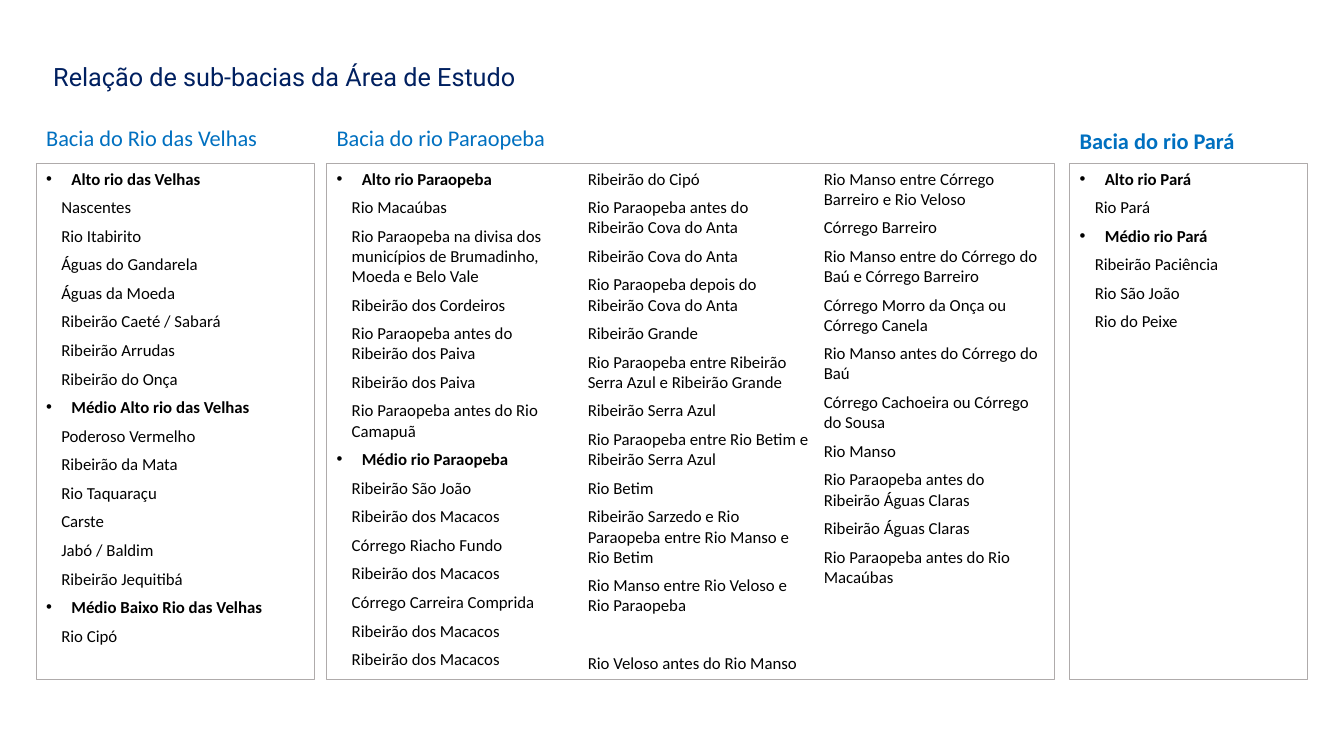
from lxml.etree import SubElement
from pptx import Presentation
from pptx.dml.color import RGBColor
from pptx.enum.shapes import MSO_SHAPE
from pptx.enum.text import MSO_ANCHOR, PP_ALIGN
from pptx.oxml.ns import qn
from pptx.util import Inches, Pt

COLORS = {"title": "002060", "basin": "0070C0", "text": "000000",
          "panel": "FFFFFF", "border": "AFABAB"}
HEADING_TOP, HEADING_HEIGHT = 1.21, 0.4
PANEL_TOP, PANEL_HEIGHT = 1.62, 5.12
SPACING = 3
WIDE_GAP = 23.5
WIDE_GAP_BEFORE = "Rio Veloso antes do Rio Manso"

VELHAS = {
    "Alto rio das Velhas": [
        "Nascentes", "Rio Itabirito", "Águas do Gandarela", "Águas da Moeda",
        "Ribeirão Caeté / Sabará", "Ribeirão Arrudas", "Ribeirão do Onça"],
    "Médio Alto rio das Velhas": [
        "Poderoso Vermelho", "Ribeirão da Mata", "Rio Taquaraçu", "Carste",
        "Jabó / Baldim", "Ribeirão Jequitibá"],
    "Médio Baixo Rio das Velhas": ["Rio Cipó"],
}
PARAOPEBA = {
    "Alto rio Paraopeba": [
        "Rio Macaúbas",
        "Rio Paraopeba na divisa dos municípios de Brumadinho, Moeda e Belo Vale",
        "Ribeirão dos Cordeiros",
        "Rio Paraopeba antes do Ribeirão dos Paiva",
        "Ribeirão dos Paiva",
        "Rio Paraopeba antes do Rio Camapuã"],
    "Médio rio Paraopeba": [
        "Ribeirão São João",
        "Ribeirão dos Macacos",
        "Córrego Riacho Fundo",
        "Ribeirão dos Macacos",
        "Córrego Carreira Comprida",
        "Ribeirão dos Macacos",
        "Ribeirão dos Macacos",
        "Ribeirão do Cipó",
        "Rio Paraopeba antes do Ribeirão Cova do Anta",
        "Ribeirão Cova do Anta",
        "Rio Paraopeba depois do Ribeirão Cova do Anta",
        "Ribeirão Grande",
        "Rio Paraopeba entre Ribeirão Serra Azul e Ribeirão Grande",
        "Ribeirão Serra Azul",
        "Rio Paraopeba entre Rio Betim e Ribeirão Serra Azul",
        "Rio Betim",
        "Ribeirão Sarzedo e Rio Paraopeba entre Rio Manso e Rio Betim",
        "Rio Manso entre Rio Veloso e Rio Paraopeba",
        "Rio Veloso antes do Rio Manso",
        "Rio Manso entre Córrego Barreiro e Rio Veloso",
        "Córrego Barreiro",
        "Rio Manso entre do Córrego do Baú e Córrego Barreiro",
        "Córrego Morro da Onça ou Córrego Canela",
        "Rio Manso antes do Córrego do Baú",
        "Córrego Cachoeira ou Córrego do Sousa",
        "Rio Manso",
        "Rio Paraopeba antes do Ribeirão Águas Claras",
        "Ribeirão Águas Claras",
        "Rio Paraopeba antes do Rio Macaúbas"],
}
PARA = {
    "Alto rio Pará": ["Rio Pará"],
    "Médio rio Pará": ["Ribeirão Paciência", "Rio São João", "Rio do Peixe"],
}


def color(name):
    return RGBColor.from_string(COLORS[name])


def set_font(paragraph, size, color_name, bold=False, face="Calibri"):
    font = paragraph.font
    font.name, font.size, font.bold = face, Pt(size), bold
    font.color.rgb = color(color_name)


def add_heading(slide, box, text, size, color_name, bold=False, face="Calibri"):
    heading = slide.shapes.add_textbox(*map(Inches, box)).text_frame
    heading.word_wrap = True
    heading.vertical_anchor = MSO_ANCHOR.MIDDLE if bold else MSO_ANCHOR.TOP
    line = heading.paragraphs[0]
    line.text = text
    set_font(line, size, color_name, bold, face)
    return line


def add_entry(frame, text, is_group):
    """Add a bulleted bold group name or an indented sub-basin."""
    first = not frame.text
    entry = frame.paragraphs[0] if first else frame.add_paragraph()
    entry.text = text
    entry.alignment = PP_ALIGN.LEFT
    entry.level = 0 if is_group else 1
    properties = entry._p.get_or_add_pPr()
    properties.set("marL", str(Inches(0.25 if is_group else 0.15)))
    properties.set("indent", str(Inches(-0.25 if is_group else 0)))
    if is_group:
        SubElement(properties, qn("a:buFont"), typeface="Arial")
        SubElement(properties, qn("a:buChar"), char="•")
    if not first:
        entry.space_before = Pt(WIDE_GAP if text == WIDE_GAP_BEFORE else SPACING)
    entry.space_after = Pt(SPACING)
    set_font(entry, 12, "text", is_group)


def add_panel(slide, box, groups, columns):
    panel = slide.shapes.add_shape(MSO_SHAPE.RECTANGLE, *map(Inches, box))
    panel.shadow.inherit = False
    panel.fill.solid()
    panel.fill.fore_color.rgb = color("panel")
    panel.line.color.rgb = color("border")
    panel.line.width = Pt(0.75)
    frame = panel.text_frame
    frame.word_wrap = True
    frame.vertical_anchor = MSO_ANCHOR.TOP
    if columns > 1:
        frame._txBody.bodyPr.set("numCol", str(columns))
    for group, sub_basins in groups.items():
        add_entry(frame, group, True)
        for sub_basin in sub_basins:
            add_entry(frame, sub_basin, False)


def add_basin(slide, left, width, name, groups, columns=1, bold=False):
    heading = add_heading(slide, (left, HEADING_TOP, width, HEADING_HEIGHT),
                          name, 16, "basin", bold)
    heading.line_spacing = 0.9
    add_panel(slide, (left, PANEL_TOP, width, PANEL_HEIGHT), groups, columns)


def main():
    deck = Presentation()
    deck.slide_width, deck.slide_height = Inches(13.33), Inches(7.5)
    slide = deck.slides.add_slide(deck.slide_layouts[6])
    add_basin(slide, 0.36, 2.76, "Bacia do Rio das Velhas", VELHAS)
    add_basin(slide, 3.24, 7.22, "Bacia do rio Paraopeba", PARAOPEBA, columns=3)
    add_basin(slide, 10.61, 2.36, "Bacia do rio Pará", PARA, bold=True)
    add_heading(slide, (0.43, 0.56, 5.33, 0.4),
                "Relação de sub-bacias da Área de Estudo", 18, "title", face="Roboto")
    deck.save("out.pptx")


if __name__ == "__main__":
    main()
